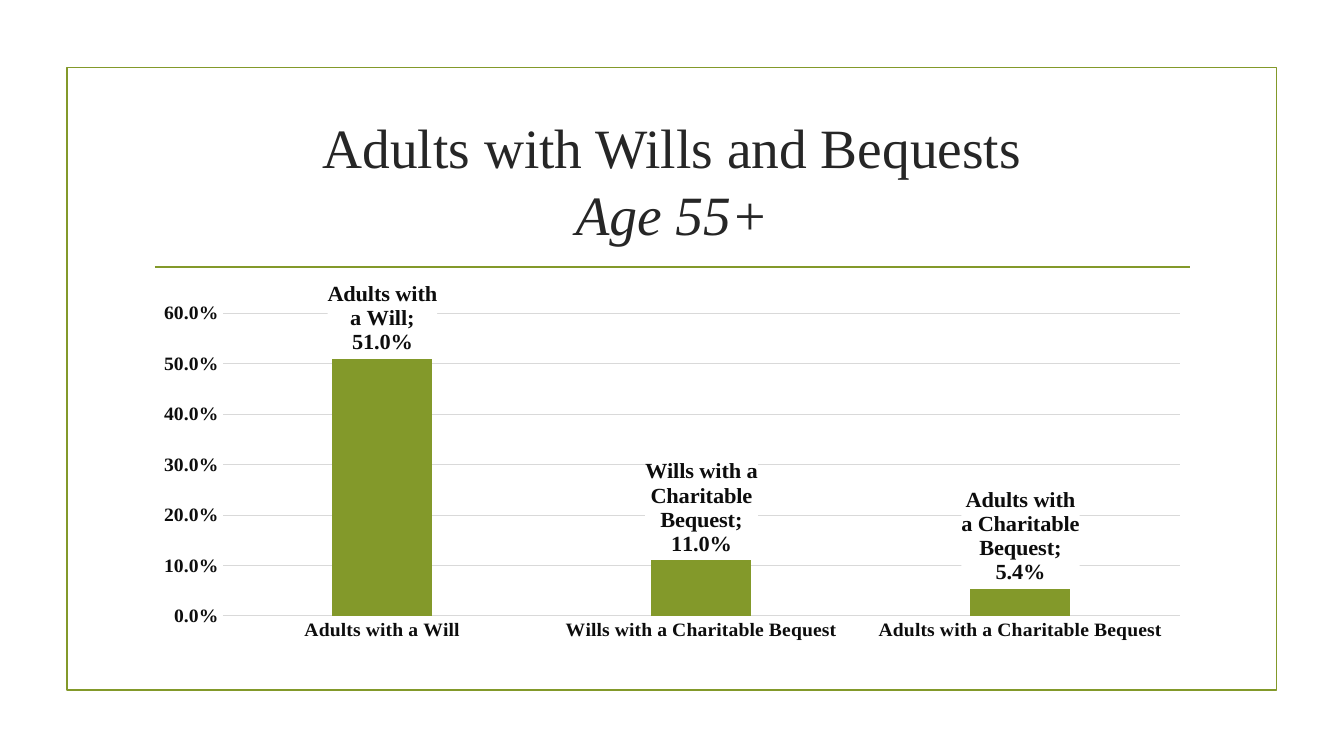
from lxml import etree
from pptx import Presentation
from pptx import util as u
from pptx.chart.data import CategoryChartData
from pptx.dml.color import RGBColor
from pptx.enum import chart as ch, shapes, text
from pptx.oxml import parse_xml
from pptx.oxml.ns import nsdecls, qn

FONT = "Times New Roman"
OLIVE, TITLE_GREY, LABEL_GREY, GRID_GREY = "83992A", "262626", "0D0D0D", "D9D9D9"
rgb = RGBColor.from_string


def add_text(paragraph, words, size, color, italic=False):
    run = paragraph.add_run()
    run.text = words
    run.font.name = FONT
    run.font.size = u.Pt(size)
    run.font.italic = italic
    run.font.color.rgb = rgb(color)


def style_line(line, color, width):
    line.color.rgb = rgb(color)
    line.width = u.Pt(width)


deck = Presentation()
deck.slide_width, deck.slide_height = u.Cm(33.87), u.Cm(19.05)
slide = deck.slides.add_slide(deck.slide_layouts[5])

# Frame around the slide
frame = slide.shapes.add_shape(
    shapes.MSO_SHAPE.RECTANGLE, u.Cm(1.69), u.Cm(1.7), u.Cm(30.48), u.Cm(15.68))
frame.shadow.inherit = False
frame.fill.background()
style_line(frame.line, OLIVE, 1.25)

# Rule under the title
rule = slide.shapes.add_connector(
    shapes.MSO_CONNECTOR.STRAIGHT, u.Cm(3.9), u.Cm(6.73), u.Cm(30), u.Cm(6.73))
style_line(rule.line, OLIVE, 1.25)
etree.SubElement(rule._element.spPr, qn("a:effectLst"))

# Title
title = slide.shapes.title
title.left, title.top, title.width, title.height = u.Cm(3.6), u.Cm(2.72), u.Cm(26.67), u.Cm(3.63)
title.text_frame.word_wrap = True
title.text_frame.auto_size = text.MSO_AUTO_SIZE.NONE
title.text_frame.vertical_anchor = text.MSO_ANCHOR.MIDDLE
heading = title.text_frame.paragraphs[0]
heading.alignment = text.PP_ALIGN.CENTER
add_text(heading, "Adults with Wills and Bequests", size=39.6, color=TITLE_GREY)
heading.add_line_break()
add_text(heading, "Age 55+", size=39.6, color=TITLE_GREY, italic=True)

# Chart of shares
shares = CategoryChartData(number_format="0.0%")
shares.categories = ["Adults with a Will", "Wills with a Charitable Bequest",
                     "Adults with a Charitable Bequest"]
shares.add_series("Series 1", [0.51, 0.11, 0.054])
chart = slide.shapes.add_chart(
    ch.XL_CHART_TYPE.COLUMN_CLUSTERED,
    u.Cm(3.6), u.Cm(7.11), u.Cm(26.67), u.Cm(9.22), shares).chart
chart.has_title = False
chart.has_legend = False
chart.font.name = FONT
chart.font.size = u.Pt(10)
chart.font.color.rgb = rgb("000000")

# Columns
columns = chart.plots[0]
columns.gap_width = 219
columns.overlap = -27
columns.vary_by_categories = False
bars = columns.series[0]
bars.format.fill.solid()
bars.format.fill.fore_color.rgb = rgb(OLIVE)

# Axes
groups, percent = chart.category_axis, chart.value_axis
for axis in (groups, percent):
    axis.major_tick_mark = axis.minor_tick_mark = ch.XL_TICK_MARK.NONE
style_line(groups.format.line, GRID_GREY, 0.75)
percent.format.line.fill.background()
percent.has_major_gridlines = True
style_line(percent.major_gridlines.format.line, GRID_GREY, 0.75)
percent.minimum_scale, percent.maximum_scale, percent.major_unit = 0, 0.6, 0.1
percent.tick_labels.number_format = "0.0%"
percent.tick_labels.number_format_is_linked = False

# Data labels on a white ground
labels = bars.data_labels
labels.show_value = True
labels.show_category_name = True
labels.number_format = "0.0%"
labels.number_format_is_linked = False
labels.position = ch.XL_LABEL_POSITION.OUTSIDE_END
labels._element.find(qn("c:numFmt")).addnext(parse_xml(
    f'<c:spPr {nsdecls("c", "a")}><a:solidFill><a:srgbClr val="FFFFFF"/></a:solidFill>'
    '<a:ln><a:noFill/></a:ln></c:spPr>'))

# Fonts of axes and labels
for font, size in ((groups.tick_labels.font, 14), (percent.tick_labels.font, 14), (labels.font, 16)):
    font.name = FONT
    font.size = u.Pt(size)
    font.bold = True
    font.color.rgb = rgb(LABEL_GREY)

deck.save("out.pptx")
